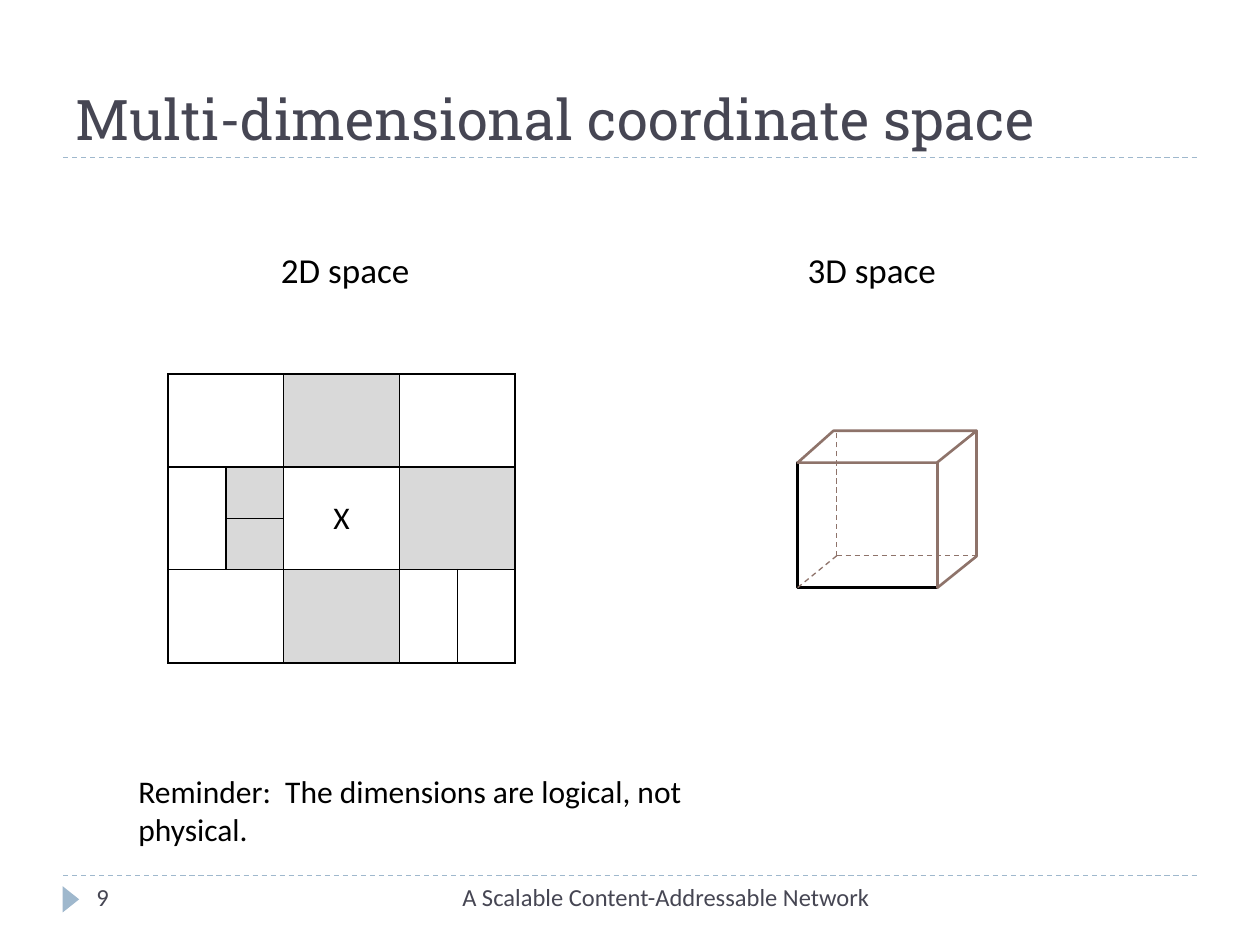
from dataclasses import dataclass

from lxml import etree
from pptx import Presentation
from pptx.dml.color import RGBColor
from pptx.enum.dml import MSO_LINE
from pptx.enum.shapes import MSO_CONNECTOR, MSO_SHAPE
from pptx.enum.text import MSO_ANCHOR, PP_ALIGN
from pptx.oxml.ns import qn
from pptx.util import Pt

LEFT, CENTER, RIGHT = PP_ALIGN.LEFT, PP_ALIGN.CENTER, PP_ALIGN.RIGHT
TOP, MIDDLE, BOTTOM = MSO_ANCHOR.TOP, MSO_ANCHOR.MIDDLE, MSO_ANCHOR.BOTTOM
DASH, STRAIGHT = MSO_LINE.DASH, MSO_CONNECTOR.STRAIGHT
RECT, TRIANGLE = MSO_SHAPE.RECTANGLE, MSO_SHAPE.ISOSCELES_TRIANGLE
SLANT = MSO_SHAPE.FLOWCHART_DATA


@dataclass(frozen=True)
class Theme:
    """Colours, fonts and type sizes of the slide."""
    ink: str = "464653"
    rule: str = "9FB8CD"
    edge: str = "8E736A"
    shade: str = "D9D9D9"
    black: str = "000000"
    white: str = "FFFFFF"
    head: str = "Roboto Slab"
    body: str = "Calibri"
    title: int = 32
    label: int = 20
    note: int = 18
    foot: int = 14


THEME = Theme()


def color(value):
    """Turn a hex string into a colour."""
    return RGBColor.from_string(value)


def style(para, size, tint, font=THEME.body, align=LEFT):
    """Format a paragraph."""
    para.alignment = align
    for name, value in {"size": Pt(size), "name": font}.items():
        setattr(para.font, name, value)
    para.font.color.rgb = color(tint)
    for run in para.runs:
        for name, value in {"size": Pt(size), "name": font}.items():
            setattr(run.font, name, value)
        run.font.color.rgb = color(tint)


def add_text(shapes, box, text, size, tint, anchor=TOP, **form):
    """Place one wrapped paragraph in a box."""
    frame = shapes.add_textbox(*map(Pt, box)).text_frame
    for name, value in {"word_wrap": True, "vertical_anchor": anchor, "text": text}.items():
        setattr(frame, name, value)
    style(frame.paragraphs[0], size, tint, **form)


def add_line(shapes, start, end, tint, width=0.75, dash=None):
    """Draw a straight line between two points."""
    link = shapes.add_connector(STRAIGHT, *map(Pt, (*start, *end)))
    link.line.color.rgb = color(tint)
    for name, value in {"width": Pt(width), "dash_style": dash}.items():
        setattr(link.line, name, value)
    etree.SubElement(link._element.spPr, qn("a:effectLst"))


def add_face(shapes, kind, box, fill, tint=None, turn=0):
    """Draw a filled preset shape, outlined when a tint is given."""
    face = shapes.add_shape(kind, *map(Pt, box))
    face.shadow.inherit = False
    face.rotation = turn
    face.fill.solid()
    face.fill.fore_color.rgb = color(fill)
    if tint:
        face.line.color.rgb = color(tint)
        face.line.width = Pt(1.5)
    else:
        face.line.fill.background()
    return face


def add_head(shapes, box):
    """Place the title with the rule under it."""
    left, top, wide, high = box
    add_text(shapes, box, "Multi-dimensional coordinate space", THEME.title,
             THEME.ink, BOTTOM, font=THEME.head)
    add_line(shapes, (left, top + high), (left + wide, top + high), THEME.rule, dash=DASH)


def add_foot(shapes, box):
    """Place the rule, marker, page number and footer."""
    left, top, wide, high = box
    add_line(shapes, (left, top), (left + wide, top), THEME.rule, dash=DASH)
    add_face(shapes, TRIANGLE, (left - 3, top + 8.8, 15, 9.4), THEME.rule, turn=90)
    add_text(shapes, (left + 12, top, 156, high), "9", THEME.foot, THEME.ink)
    add_text(shapes, (left + 192, top, 276, high),
             "A Scalable Content-Addressable Network", THEME.foot, THEME.ink, align=RIGHT)


def add_border(cell):
    """Give a cell thin black borders."""
    props = cell._tc.get_or_add_tcPr()
    for spot, side in enumerate(("lnL", "lnR", "lnT", "lnB")):
        line = etree.Element(qn(f"a:{side}"), w=str(Pt(1)))
        fill = etree.SubElement(line, qn("a:solidFill"))
        etree.SubElement(fill, qn("a:srgbClr"), val=THEME.black)
        props.insert(spot, line)


def add_zones(shapes, box):
    """Draw the plane split into zones, with the neighbours of X shaded."""
    left, top, wide, high = box
    unit = wide / 6
    cols = [unit, unit, 2 * unit, unit, unit]
    half = 29.3
    rows = [high / 2 - half, half, half, high / 2 - half]
    grid = shapes.add_table(4, 5, *map(Pt, box)).table
    for name in ("first_row", "horz_banding"):
        setattr(grid, name, False)
    for col, size in zip(grid.columns, cols):
        col.width = Pt(size)
    for row, size in zip(grid.rows, rows):
        row.height = Pt(size)
    shaded = {(0, 2), (1, 1), (2, 1), (1, 3), (1, 4), (2, 3), (2, 4), (3, 2)}
    for r in range(4):
        for c in range(5):
            cell = grid.cell(r, c)
            cell.fill.solid()
            cell.fill.fore_color.rgb = color(THEME.shade if (r, c) in shaded else THEME.white)
            add_border(cell)
    spans = [((0, 0), (0, 1)), ((0, 3), (0, 4)), ((1, 0), (2, 0)),
             ((1, 2), (2, 2)), ((1, 3), (2, 4)), ((3, 0), (3, 1))]
    for first, last in spans:
        grid.cell(*first).merge(grid.cell(*last))
    mid = grid.cell(1, 2)
    for name, value in {"text": "X", "vertical_anchor": MIDDLE}.items():
        setattr(mid, name, value)
    style(mid.text_frame.paragraphs[0], THEME.note, THEME.black, align=CENTER)


def add_cube(shapes, box):
    """Draw a cube with dashed hidden edges."""
    left, top, wide, high = box
    deep, rise = 22.3, 18.2
    face_w, face_h = wide - deep, high - rise
    back, low = left + deep, top + face_h
    right, base = left + wide, top + high
    front, brow = left + face_w, top + rise
    group = shapes.add_group_shape().shapes
    add_face(group, RECT, (back, top, face_w, face_h), THEME.white, THEME.edge)
    add_face(group, RECT, (left, brow, face_w, face_h), THEME.white, THEME.black)
    add_face(group, SLANT, (left, top, wide, rise), THEME.white, THEME.edge)
    side = (front + (deep - high) / 2, top + (high - deep) / 2, high, deep)
    flank = add_face(group, SLANT, side, THEME.white, THEME.edge, 90)
    flank._element.spPr.xfrm.set("flipV", "1")
    for end in ((left, base), (right, low), (back, top)):
        add_line(group, (back, low), end, THEME.edge, dash=DASH)


def build():
    """Build and save the slide."""
    deck = Presentation()
    deck.slide_width, deck.slide_height = Pt(720), Pt(540)
    shapes = deck.slides.add_slide(deck.slide_layouts[6]).shapes
    add_head(shapes, (36, 12, 648, 78))
    add_foot(shapes, (36, 500.4, 648, 28.8))
    add_zones(shapes, (96, 213.6, 198.4, 165.2))
    add_cube(shapes, (455.8, 246.2, 102.2, 89.6))
    for left, text in ((143.3, "2D space"), (444.2, "3D space")):
        add_text(shapes, (left, 138.2, 108, 31.7), text, THEME.label, THEME.black, align=CENTER)
    add_text(shapes, (72, 437.8, 386, 50),
             "Reminder:  The dimensions are logical, not physical.", THEME.note, THEME.black)
    deck.save("out.pptx")


if __name__ == "__main__":
    build()
